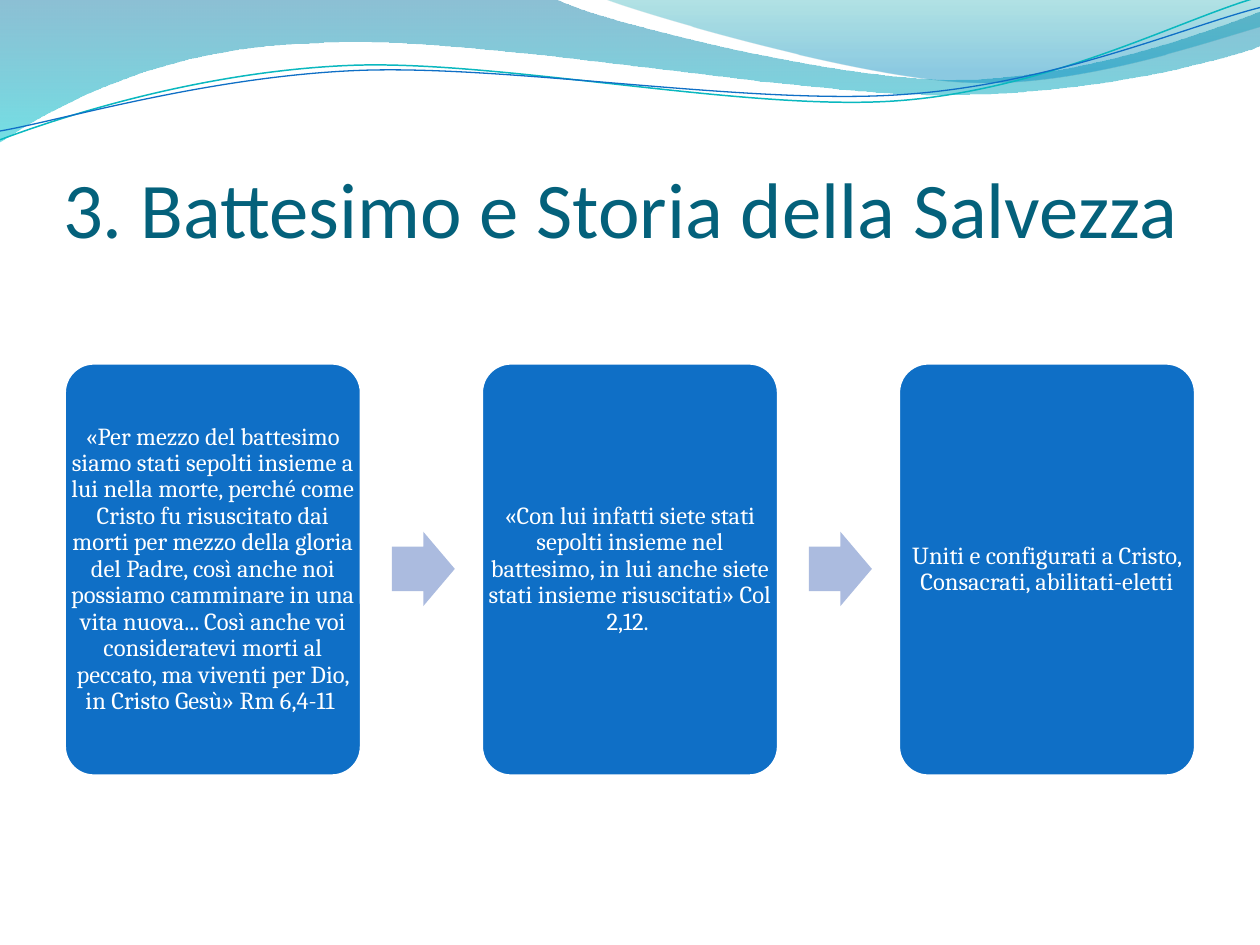
"""Build the slide on baptism and salvation history: wave banner, title and three linked steps."""
from lxml import etree
from pptx import Presentation
from pptx import util as u
from pptx.dml.color import RGBColor
from pptx.enum import shapes, text
from pptx.oxml.ns import qn

COLORS = {
    "title": "04617B", "step": "0F6FC6", "arrow": "ABBBDF", "white": "FFFFFF",
    "sea": "0074A1", "aqua": "00C6CF", "teal": "00A1A9", "sky": "008BBF",
    "teal line": "0AB8BF", "blue line": "0F6FC6",
}


def color(name):
    return RGBColor.from_string(COLORS[name])


def draw_wave(start, segments, closed):
    """Trace straight (2 numbers) and cubic (6 numbers) segments, in inches."""
    points = [(u.Inches(s[i]), u.Inches(s[i + 1])) for s in segments for i in range(0, len(s), 2)]
    builder = slide.shapes.build_freeform(*map(u.Inches, start))
    builder.add_line_segments(points, close=closed)
    wave = builder.convert_to_shape()
    wave.shadow.inherit = False
    vertices = iter(list(wave.element.spPr.iter(qn("a:lnTo"))))
    for segment in segments:
        vertex = next(vertices)
        if len(segment) == 6:
            curve = etree.Element(qn("a:cubicBezTo"))
            vertex.addprevious(curve)
            for corner in (vertex, next(vertices), next(vertices)):
                curve.append(corner[0])
                corner.getparent().remove(corner)
    return wave


prs = Presentation()
prs.slide_width, prs.slide_height = u.Inches(10), u.Inches(7.5)
slide = prs.slides.add_slide(prs.slide_layouts[5])

bands = [
    ((0, 0), [(4.4, -0.01), (4.76, 0.17, 6.64, 0.63, 7.58, 0.63),
              (8.53, 0.63, 9.58, 0.26, 10, 0.09), (10.01, 0.36),
              (9.83, 0.44, 8.7, 0.76, 7.46, 0.75), (6.22, 0.75, 3.82, 0.28, 2.57, 0.34),
              (1.29, 0.36, 0.46, 0.83, -0.01, 1.13), (0, 0)],
     [("sea", 0, 45), ("aqua", 1, 55)]),
    ((4.79, -0.01), [(5.09, 0.11, 6.82, 0.62, 7.69, 0.65),
                     (8.56, 0.69, 9.61, 0.32, 10, 0.21), (10, 0), (4.79, -0.01)],
     [("teal", 0, 30), ("sky", 0.8, 45)]),
]
for start, segments, stops in bands:
    band = draw_wave(start, segments, True)
    band.line.fill.background()
    band.fill.gradient()
    band.fill.gradient_angle = 270
    for stop, (name, position, _) in zip(band.fill.gradient_stops, stops):
        stop.color.rgb = color(name)
        stop.position = position
    for rgb, (_, _, opacity) in zip(band.element.spPr.iter(qn("a:srgbClr")), stops):
        etree.SubElement(rgb, qn("a:alpha"), val=str(opacity * 1000))

ripples = [
    ((0, 1.11), [(0.48, 0.93, 1.58, 0.57, 2.77, 0.52), (3.95, 0.47, 5.93, 0.89, 7.13, 0.8),
                 (8.33, 0.71, 9.38, 0.15, 9.98, -0.02)], "teal line", 0.85),
    ((0, 1.04), [(0.47, 0.96, 1.64, 0.61, 2.83, 0.56), (4.03, 0.51, 5.97, 0.84, 7.17, 0.75),
                 (8.36, 0.67, 9.41, 0.21, 10, 0.06)], "blue line", 0.75),
]
for start, segments, name, width in ripples:
    ripple = draw_wave(start, segments, False)
    ripple.fill.background()
    ripple.line.color.rgb = color(name)
    ripple.line.width = u.Pt(width)

title = slide.shapes.title
title.left, title.top, title.width, title.height = map(u.Inches, (0.5, 0.77, 9, 1.25))
heading = title.text_frame
heading.text = "3. Battesimo e Storia della Salvezza"
heading.auto_size = text.MSO_AUTO_SIZE.NONE
heading.word_wrap = True
heading.vertical_anchor = text.MSO_ANCHOR.BOTTOM
heading.margin_left = heading.margin_right = heading.margin_bottom = 0
heading.margin_top = u.Inches(0.05)
heading.paragraphs[0].alignment = text.PP_ALIGN.LEFT
heading.paragraphs[0].font.name = "Calibri"
heading.paragraphs[0].font.size = u.Pt(45)
heading.paragraphs[0].font.color.rgb = color("title")

steps = [
    "«Per mezzo del battesimo siamo stati sepolti insieme a lui nella morte, perché come "
    "Cristo fu risuscitato dai morti per mezzo della gloria del Padre, così anche noi "
    "possiamo camminare in una vita nuova... Così anche voi consideratevi morti al peccato, "
    "ma viventi per Dio, in Cristo Gesù» Rm 6,4-11 ",
    "«Con lui infatti siete stati sepolti insieme nel battesimo, in lui anche siete stati "
    "insieme risuscitati» Col 2,12. ",
    "Uniti e configurati a Cristo, Consacrati, abilitati-eletti",
]
pitch = 3.31
for index, wording in enumerate(steps):
    left = 0.51 + index * pitch
    if index:
        arrow = slide.shapes.add_shape(
            shapes.MSO_SHAPE.RIGHT_ARROW,
            *map(u.Inches, (left - 0.71, 4.22, 0.5, 0.59)))
        arrow.adjustments[0], arrow.adjustments[1] = 0.6, 0.5
        arrow.shadow.inherit = False
        arrow.fill.solid()
        arrow.fill.fore_color.rgb = color("arrow")
        arrow.line.fill.background()

    area = [u.Inches(length) for length in (left, 2.88, 2.36, 3.28)]
    card = slide.shapes.add_shape(shapes.MSO_SHAPE.ROUNDED_RECTANGLE, *area)
    card.adjustments[0] = 0.1
    card.shadow.inherit = False
    card.fill.solid()
    card.fill.fore_color.rgb = color("step")
    card.line.color.rgb = color("white")
    card.line.width = u.Pt(2)

    quote = slide.shapes.add_textbox(*area).text_frame
    quote.word_wrap = True
    quote.vertical_anchor = text.MSO_ANCHOR.MIDDLE
    quote.margin_left = quote.margin_right = u.Inches(0.04)
    quote.margin_top = quote.margin_bottom = u.Inches(0.06)
    quote.text = wording
    paragraph = quote.paragraphs[0]
    paragraph.alignment = text.PP_ALIGN.CENTER
    paragraph.line_spacing = 0.9
    paragraph.font.name = "Cambria"
    paragraph.font.size = u.Pt(14)
    paragraph.font.color.rgb = color("white")

prs.save("out.pptx")
